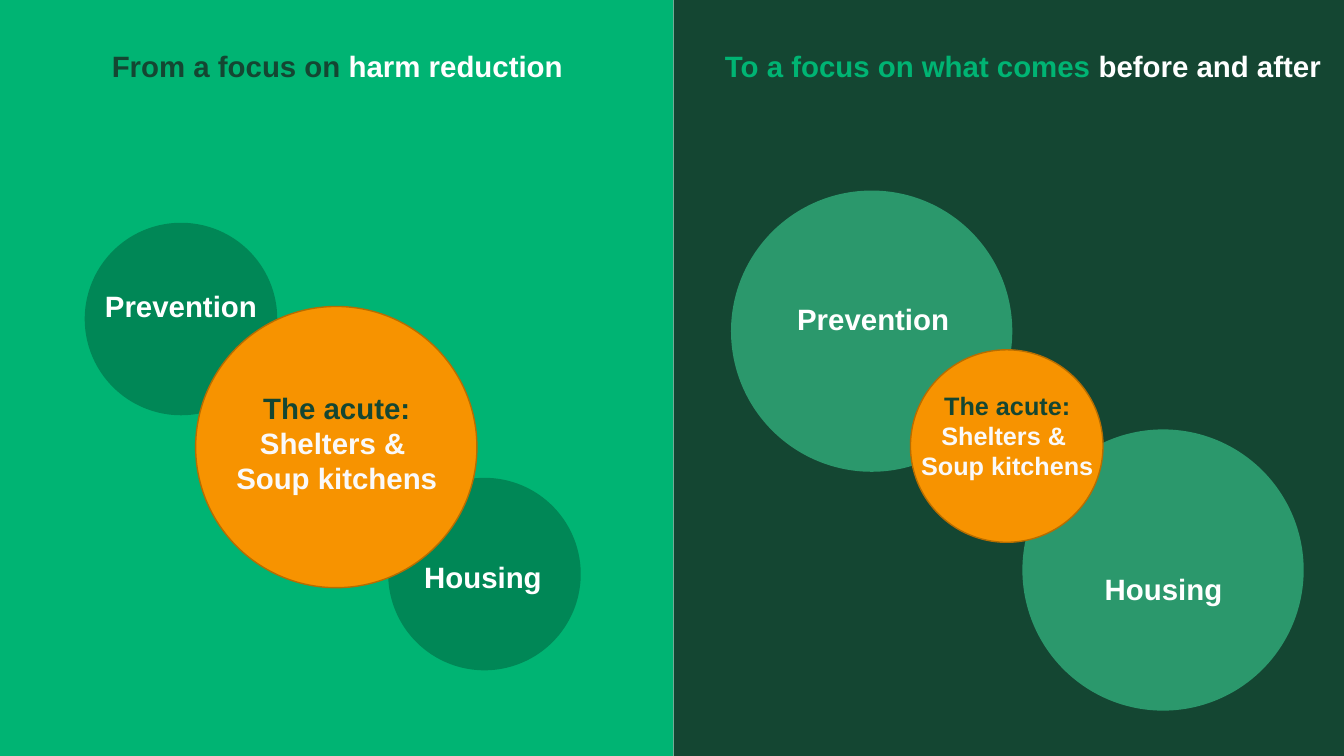
import pptx
import pptx.util
import pptx.dml.color
import pptx.enum.shapes
import pptx.enum.text

Inches = pptx.util.Inches
Pt = pptx.util.Pt

COLORS = {
    "green": "00B473",
    "forest": "144632",
    "leaf": "008756",
    "sage": "2B986C",
    "orange": "F79300",
    "rust": "B76D00",
    "white": "FFFFFF",
    "offwhite": "FAF9F9",
}
SMALL, LARGE = 1.91, 2.79
ACUTE = [
    [("The acute:", "forest"), None, ("Shelters & ", "offwhite")],
    [("Soup kitchens", "offwhite")],
]


class Deck:
    font = "Arial"

    def __init__(self, prs):
        self.s = prs.slides.add_slide(prs.slide_layouts[5])

    def color(self, name):
        return pptx.dml.color.RGBColor.from_string(COLORS[name])

    def shape(self, kind, left, top, width, height, fill, line=None):
        sp = self.s.shapes.add_shape(
            kind, Inches(left), Inches(top), Inches(width), Inches(height))
        sp.shadow.inherit = False
        sp.fill.solid()
        sp.fill.fore_color.rgb = self.color(fill)
        if line:
            sp.line.color.rgb = self.color(line)
            sp.line.width = Pt(1)
        else:
            sp.line.fill.background()

    def panel(self, left, width, fill):
        self.shape(pptx.enum.shapes.MSO_SHAPE.RECTANGLE, left, 0, width, 7.5, fill)

    def circle(self, left, top, size, fill, line=None):
        self.shape(pptx.enum.shapes.MSO_SHAPE.OVAL, left, top, size, size, fill, line)

    def set_text(self, sp, paragraphs, size):
        tf = sp.text_frame
        tf.word_wrap = True
        tf.auto_size = pptx.enum.text.MSO_AUTO_SIZE.SHAPE_TO_FIT_TEXT
        tf.vertical_anchor = pptx.enum.text.MSO_ANCHOR.TOP
        for i, runs in enumerate(paragraphs):
            p = tf.add_paragraph() if i else tf.paragraphs[0]
            p.alignment = pptx.enum.text.PP_ALIGN.CENTER
            p.font.size = Pt(size)
            for run in runs:
                if run is None:
                    p.add_line_break()
                    continue
                r = p.add_run()
                r.text, fill = run
                r.font.name = self.font
                r.font.size = Pt(size)
                r.font.bold = True
                r.font.color.rgb = self.color(fill)

    def title(self, left, top, width, height, runs, size=21):
        sp = self.s.shapes.title
        sp.left, sp.top = Inches(left), Inches(top)
        sp.width, sp.height = Inches(width), Inches(height)
        self.s.shapes._spTree.append(sp._element)
        self.set_text(sp, [runs], size)

    def text(self, left, top, width, height, paragraphs, size=21):
        sp = self.s.shapes.add_textbox(
            Inches(left), Inches(top), Inches(width), Inches(height))
        self.set_text(sp, paragraphs, size)

    def label(self, left, top, width, text):
        self.text(left, top, width, 0.45, [[(text, "white")]])


def main():
    prs = pptx.Presentation()
    prs.slide_width, prs.slide_height = Inches(13.33), Inches(7.5)
    deck = Deck(prs)

    deck.panel(0, 6.68, "green")
    deck.panel(6.68, 6.65, "forest")
    deck.title(0, 0.43, 6.69, 0.45,
               [("From a focus on ", "forest"), ("harm reduction", "white")])
    deck.text(6.69, 0.43, 6.91, 0.45,
              [[("To a focus on what comes ", "green"), ("before and after", "white")]])

    deck.circle(7.25, 1.89, LARGE, "sage")
    deck.circle(10.14, 4.26, LARGE, "sage")
    deck.circle(9.03, 3.47, SMALL, "orange", "rust")
    deck.text(6.65, 3.82, 6.68, 1.01, ACUTE, 18)
    deck.label(6.87, 2.94, 3.58, "Prevention")
    deck.label(10.14, 5.62, 2.8, "Housing")

    deck.circle(3.85, 4.74, SMALL, "leaf")
    deck.circle(0.84, 2.21, SMALL, "leaf")
    deck.label(3.7, 5.5, 2.18, "Housing")
    deck.label(0.61, 2.81, 2.37, "Prevention")
    deck.circle(1.94, 3.04, LARGE, "orange", "rust")
    deck.text(0, 3.82, 6.68, 1.16, ACUTE)

    prs.save("out.pptx")


if __name__ == "__main__":
    main()
